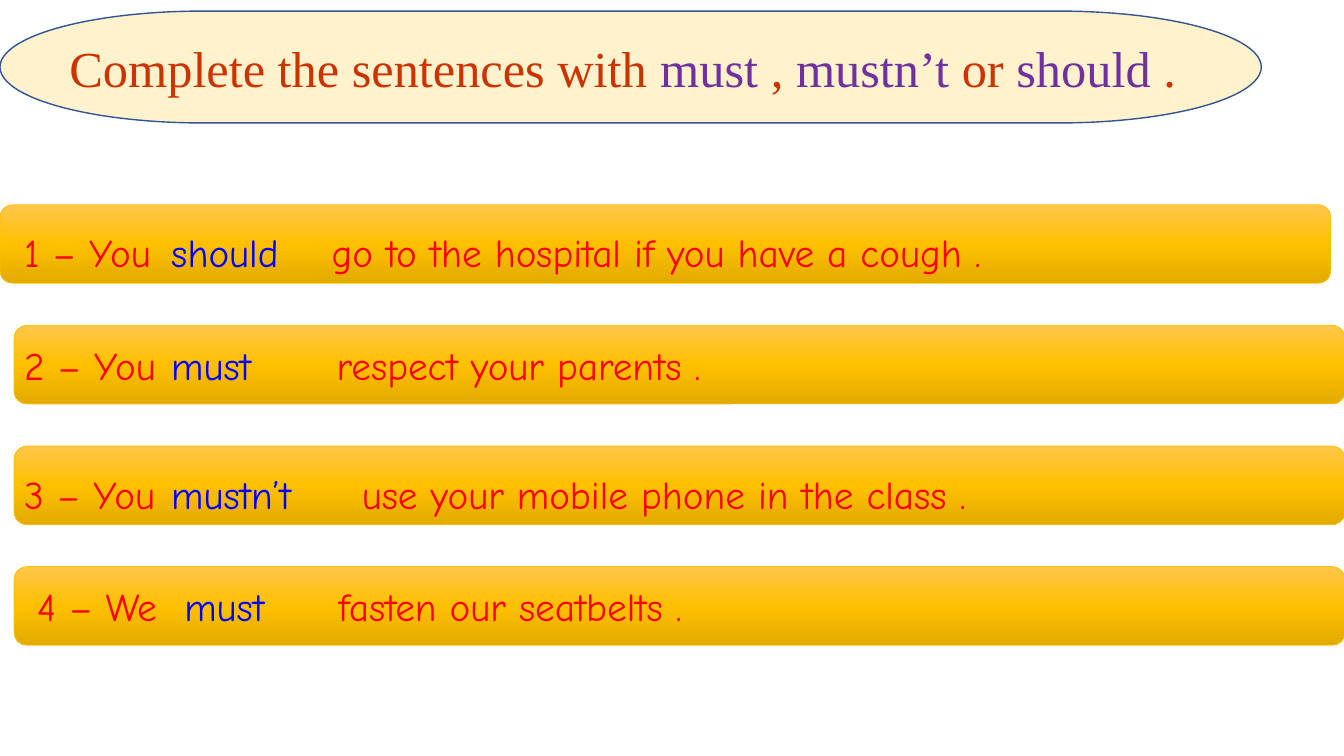
from copy import deepcopy

from pptx import Presentation
from pptx.dml.color import RGBColor
from pptx.enum.shapes import MSO_SHAPE
from pptx.enum.text import MSO_ANCHOR, MSO_AUTO_SIZE, PP_ALIGN
from pptx.oxml.ns import qn
from pptx.oxml.xmlchemy import OxmlElement
from pptx.util import Inches, Pt


def color(hex_string):
    return RGBColor.from_string(hex_string)


class ExerciseSlide:
    title_font = "Times New Roman"
    body_font = "Comic Neue"
    title_color, keyword_color = "CC3300", "7030A0"
    sentence_color, answer_color = "FF0000", "0000FF"
    bar_line = "FFC000"
    bar_stops = [(0, "FFC64B"), (0.5, "FFC000"), (1, "E3AB00")]

    def __init__(self, presentation):
        self.slide = presentation.slides.add_slide(presentation.slide_layouts[6])

    def format_run(self, run, font, size, hex_string):
        run.font.name = font
        run.font.size = Pt(size)
        run.font.color.rgb = color(hex_string)

    def shape(self, kind, left, top, width, height, line, line_width):
        shape = self.slide.shapes.add_shape(
            kind, Inches(left), Inches(top), Inches(width), Inches(height))
        shape.shadow.inherit = False
        shape.line.color.rgb = color(line)
        shape.line.width = Pt(line_width)
        return shape

    def bar(self, left, top):
        shape = self.shape(MSO_SHAPE.ROUNDED_RECTANGLE, left, top, 13.2, 0.78,
                           self.bar_line, 0.5)
        shape.fill.gradient()
        shape.fill.gradient_angle = 270
        # The default gradient has two stops; add the middle one
        stop_list = shape._element.spPr.find(".//" + qn("a:gsLst"))
        stop_list.insert(1, deepcopy(stop_list[0]))
        for stop, (position, hex_string) in zip(shape.fill.gradient_stops, self.bar_stops):
            stop.position = position
            stop.color.rgb = color(hex_string)

    def title(self, parts):
        shape = self.shape(MSO_SHAPE.FLOWCHART_TERMINATOR, 0, 0.11, 12.51, 1.11,
                           "325491", 1)
        shape.fill.solid()
        shape.fill.fore_color.rgb = color("FFF2CC")
        shape.text_frame.vertical_anchor = MSO_ANCHOR.MIDDLE
        paragraph = shape.text_frame.paragraphs[0]
        paragraph.alignment = PP_ALIGN.LEFT
        for index, part in enumerate(parts):
            run = paragraph.add_run()
            run.text = part
            hex_string = self.keyword_color if index % 2 else self.title_color
            self.format_run(run, self.title_font, 36, hex_string)

    def text(self, text, left, top, width, hex_string):
        box = self.slide.shapes.add_textbox(
            Inches(left), Inches(top), Inches(width), Inches(0.57))
        box.text_frame.word_wrap = True
        box.text_frame.auto_size = MSO_AUTO_SIZE.SHAPE_TO_FIT_TEXT
        box.text_frame.text = text
        paragraph = box.text_frame.paragraphs[0]
        for run in paragraph.runs:
            self.format_run(run, self.body_font, 28, hex_string)
        return paragraph

    def sentence(self, start, answer, ending, left, top, gap_end):
        paragraph = self.text(f"{start}\t{ending}", left, top, 12.38, self.sentence_color)
        # A tab stop leaves the gap that the answer fills
        tab_list = OxmlElement("a:tabLst")
        tab = OxmlElement("a:tab")
        tab.set("pos", str(Inches(gap_end)))
        tab.set("algn", "l")
        tab_list.append(tab)
        paragraph._p.get_or_add_pPr().append(tab_list)
        self.text(answer, left + 1.46, top, 1.59, self.answer_color)


def main():
    presentation = Presentation()
    presentation.slide_width = Inches(13.33)
    presentation.slide_height = Inches(7.5)
    exercise = ExerciseSlide(presentation)

    # Title: every second part is a keyword
    exercise.title(["Complete the sentences with ", "must", " , ", "mustn’t",
                    " or ", "should", " ."])

    # Sentences: bar left, text left, text offset, gap end, wording
    sentences = [
        (0, 0.14, 0.19, 3.05, "1 – You", "should",
         "go to the hospital if you have a cough ."),
        (0.14, 0.14, 0.11, 3.1, "2 – You", "must", "respect your parents ."),
        (0.14, 0.14, 0.19, 3.35, "3 – You", "mustn’t",
         "use your mobile phone in the class ."),
        (0.14, 0.27, 0.11, 2.99, "4 – We", "must", "fasten our seatbelts ."),
    ]
    for row, (bar_left, left, offset, gap_end, start, answer, ending) in enumerate(sentences):
        top = 2.03 + row * 1.197
        exercise.bar(bar_left, top)
        exercise.sentence(start, answer, ending, left, top + offset, gap_end)

    presentation.save("out.pptx")


if __name__ == "__main__":
    main()
